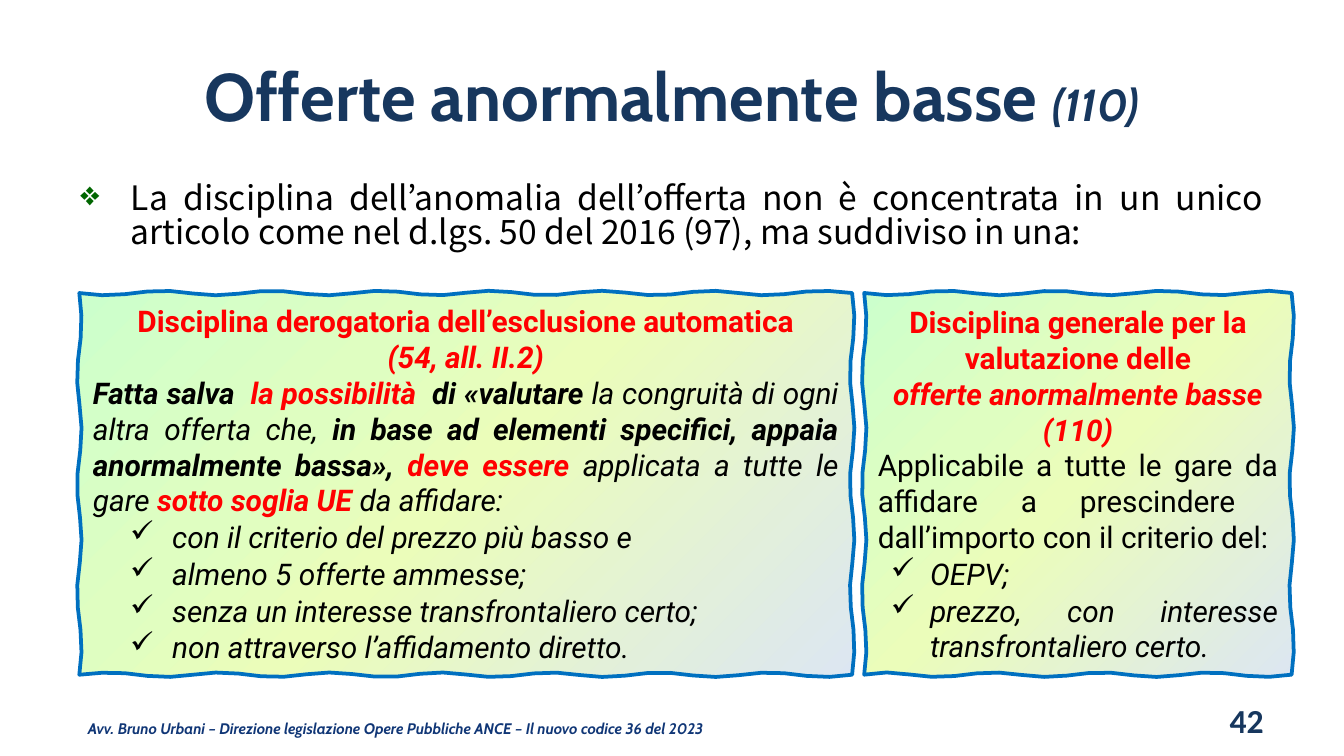
from dataclasses import dataclass
from math import sin
from typing import Optional

from lxml.etree import SubElement
from pptx import Presentation
from pptx.dml.color import RGBColor
from pptx.enum.text import MSO_ANCHOR as Anchor, PP_ALIGN as Align
from pptx.oxml.ns import qn
from pptx.util import Pt

COLOURS = {"navy": "17375E", "footer": "103676", "black": "000000", "red": "FF0000",
           "green": "006600", "edge": "0070C0"}
GRADIENT = {0: "DCE6F2", 50: "EBFDBA", 69: "DFFEC1", 100: "CCFFCC"}
GRADIENT_ANGLE = 225
WOBBLE = 1.2
STEP = 12
CARD_TOP, CARD_HEIGHT = 157, 204.5


@dataclass(frozen=True)
class Span:
    """Text with one format; style holds b for bold and i for italic."""
    text: str
    style: str = ""
    colour: str = "black"
    size: float = 16
    font: str = "Roboto"


@dataclass(frozen=True)
class Bullet:
    """A bullet sign with its hanging indent."""
    sign: str
    left: float
    hang: float
    colour: str = "black"


@dataclass(frozen=True)
class Para:
    """A paragraph made of spans."""
    spans: tuple[Span, ...]
    align: Align = Align.LEFT
    bullet: Optional[Bullet] = None
    before: Optional[float] = None
    spacing: Optional[float] = None


@dataclass(frozen=True)
class Area:
    """A rectangle in points."""
    left: float
    top: float
    width: float
    height: float


@dataclass(frozen=True)
class Card:
    """A hand-drawn panel with its paragraphs."""
    area: Area
    paras: tuple[Para, ...]


def rgb(name: str) -> RGBColor:
    """Return the named colour."""
    return RGBColor.from_string(COLOURS[name])


def add_bullet(target, bullet: Bullet) -> None:
    """Give a paragraph its bullet and hanging indent."""
    props = target._p.get_or_add_pPr()
    props.set("marL", str(Pt(bullet.left)))
    props.set("indent", str(-Pt(bullet.hang)))
    colour = SubElement(props, qn("a:buClr"))
    SubElement(colour, qn("a:srgbClr"), val=COLOURS[bullet.colour])
    SubElement(props, qn("a:buChar"), char=bullet.sign)


def write(frame, paras: tuple[Para, ...], anchor: Anchor,
          side: float = 7.2, edge: float = 3.6) -> None:
    """Fill a text frame with paragraphs."""
    layout = {"word_wrap": True, "vertical_anchor": anchor,
              "margin_left": Pt(side), "margin_right": Pt(side),
              "margin_top": Pt(edge), "margin_bottom": Pt(edge)}
    for name, value in layout.items():
        setattr(frame, name, value)
    for index, para in enumerate(paras):
        target = frame.add_paragraph() if index else frame.paragraphs[0]
        if para.bullet:
            add_bullet(target, para.bullet)
        target.alignment = para.align
        if para.before is not None:
            target.space_before = Pt(para.before)
        if para.spacing is not None:
            target.line_spacing = para.spacing
        for span in para.spans:
            run = target.add_run()
            run.text = span.text
            formats = {"size": Pt(span.size), "name": span.font,
                       "bold": "b" in span.style, "italic": "i" in span.style}
            for name, value in formats.items():
                setattr(run.font, name, value)
            run.font.color.rgb = rgb(span.colour)


def add_text(page, area: Area, para: Para, anchor: Anchor = Anchor.MIDDLE) -> None:
    """Add a text box with one paragraph."""
    box = page.shapes.add_textbox(Pt(area.left), Pt(area.top), Pt(area.width), Pt(area.height))
    write(box.text_frame, (para,), anchor)


def wavy_outline(area: Area) -> list[tuple[int, int]]:
    """Return the points of a rectangle with gently waving sides."""
    right, bottom = area.left + area.width, area.top + area.height
    corners = [(area.left, area.top), (right, area.top), (right, bottom), (area.left, bottom)]
    points = []
    for side, (x, y) in enumerate(corners):
        end_x, end_y = corners[(side + 1) % 4]
        count = round((abs(end_x - x) + abs(end_y - y)) / STEP)
        for step in range(count):
            share = step / count
            shift = WOBBLE * sin(step * 1.3) if step else 0
            across, down = (0, shift) if side % 2 == 0 else (shift, 0)
            points.append((Pt(x + (end_x - x) * share + across),
                           Pt(y + (end_y - y) * share + down)))
    return points


def fill_gradient(shape) -> None:
    """Fill a shape with the card gradient."""
    shape.fill.gradient()
    gradient = shape._element.spPr.find(qn("a:gradFill"))
    for child in list(gradient):
        gradient.remove(child)
    stops = SubElement(gradient, qn("a:gsLst"))
    for place, colour in GRADIENT.items():
        stop = SubElement(stops, qn("a:gs"), pos=str(place * 1000))
        SubElement(stop, qn("a:srgbClr"), val=colour)
    SubElement(gradient, qn("a:lin"), ang=str(GRADIENT_ANGLE * 60000), scaled="0")


def add_card(page, card: Card) -> None:
    """Add a wavy panel with its text."""
    start, *rest = wavy_outline(card.area)
    builder = page.shapes.build_freeform(*start)
    builder.add_line_segments(rest, close=True)
    shape = builder.convert_to_shape()
    shape.shadow.inherit = False
    fill_gradient(shape)
    shape.line.color.rgb = rgb("edge")
    shape.line.width = Pt(2)
    write(shape.text_frame, card.paras, Anchor.MIDDLE, 7.2 + WOBBLE)


def heading(text: str, style: str) -> Para:
    """Return a red centred heading."""
    return Para((Span(text, style, "red"),), Align.CENTER)


def ticks(left: float, hang: float, align: Align, *texts: str) -> tuple[Para, ...]:
    """Return ticked list entries in italics."""
    return tuple(Para((Span(text, "i"),), align, Bullet("✓", left, hang), 0.5) for text in texts)


TITLE = Para((Span("Offerte anormalmente basse ", "b", "navy", 36, "Cabin"),
              Span("(110)", "bi", "navy", 24, "Cabin")), Align.CENTER)
INTRO = Para((Span("La disciplina dell’anomalia dell’offerta non è concentrata in un unico articolo "
                   "come nel d.lgs. 50 del 2016 (97), ma suddiviso in una:",
                   size=18, font="Noto Sans CJK JP"),),
             Align.JUSTIFY, Bullet("❖", 27, 27, "green"), spacing=0.85)
FOOTER = Para((Span("Avv. Bruno Urbani – Direzione legislazione Opere Pubbliche ANCE – "
                    "Il nuovo codice 36 del 2023", "bi", "footer", 8.2, "Cabin"),))
NUMBER = Para((Span("42", "b", "navy", 18, "Calibri"),), Align.RIGHT)
EXCLUSION = Card(Area(42.5, CARD_TOP, 414, CARD_HEIGHT), (
    heading("Disciplina derogatoria dell’esclusione automatica", "b"),
    heading("(54, all. II.2)", "bi"),
    Para((Span("Fatta salva  ", "bi"), Span("la possibilità  ", "bi", "red"),
          Span("di «valutare ", "bi"), Span("la congruità di ogni altra offerta che, ", "i"),
          Span("in base ad elementi specifici, appaia anormalmente bassa», ", "bi"),
          Span("deve essere ", "bi", "red"), Span("applicata a tutte le gare ", "i"),
          Span("sotto soglia UE ", "bi", "red"), Span("da affidare:", "i")), Align.JUSTIFY),
    *ticks(42.5, 22.5, Align.LEFT, "con il criterio del prezzo più basso e",
           "almeno 5 offerte ammesse;", "senza un interesse transfrontaliero certo;",
           "non attraverso l’affidamento diretto.")))
GENERAL = Card(Area(463, CARD_TOP, 229, CARD_HEIGHT), (
    heading("Disciplina generale per la valutazione delle", "b"),
    heading("offerte anormalmente basse (110)", "bi"),
    Para((Span("Applicabile a tutte le gare da affidare a prescindere  dall’importo "
               "con il criterio del:"),), Align.JUSTIFY),
    *ticks(28, 21, Align.JUSTIFY, "OEPV;", "prezzo, con interesse transfrontaliero certo.")))


def main() -> None:
    """Build and save the deck."""
    deck = Presentation()
    deck.slide_width, deck.slide_height = Pt(720), Pt(405)
    page = deck.slides.add_slide(deck.slide_layouts[6])
    add_text(page, Area(40, 379.5, 377, 21.5), FOOTER)
    add_text(page, Area(36, 16.5, 648, 68), TITLE)
    add_text(page, Area(36, 94.5, 648, 60), INTRO, Anchor.TOP)
    add_text(page, Area(516, 375, 168, 21.5), NUMBER)
    for card in (EXCLUSION, GENERAL):
        add_card(page, card)
    deck.save("out.pptx")


if __name__ == "__main__":
    main()
